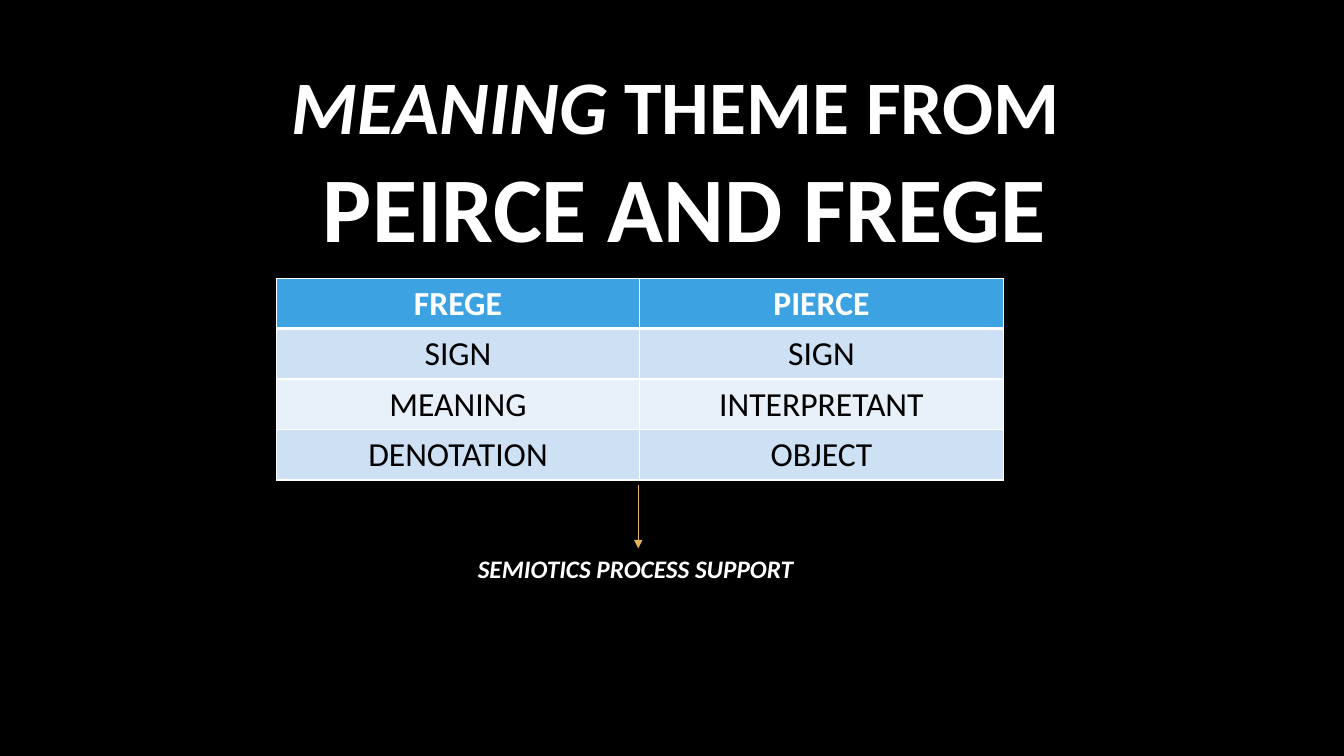
from lxml.etree import SubElement
from pptx import Presentation
from pptx.dml.color import RGBColor
from pptx.enum.shapes import MSO_CONNECTOR
from pptx.enum.text import MSO_ANCHOR, MSO_AUTO_SIZE, PP_ALIGN
from pptx.oxml.ns import qn
from pptx.util import Inches, Pt

COLORS = {
    "background": "000000", "light": "FFFFFF", "dark": "000000",
    "header": "3CA2E2", "odd": "CEE0F4", "even": "E8F0FA", "arrow": "E5B458",
}
WIDTH, HEIGHT = Inches(13.33), Inches(7.5)
TERMS = [
    ("FREGE", "PIERCE"),
    ("SIGN", "SIGN"),
    ("MEANING", "INTERPRETANT"),
    ("DENOTATION", "OBJECT"),
]


def color(name):
    """Return the palette colour with this name."""
    return RGBColor.from_string(COLORS[name])


def style(font, size, ink, bold=False, italic=None):
    """Set the typeface, size, colour and weight of a font."""
    font.name, font.size = "Calibri", Pt(size)
    font.color.rgb = color(ink)
    font.bold, font.italic = bold, italic


def add_title(slide, left, top, width, height):
    """Place the two-line heading, centred in its box."""
    heading = slide.shapes.add_textbox(left, top, width, height).text_frame
    heading.word_wrap = True
    heading.vertical_anchor = MSO_ANCHOR.MIDDLE
    line = heading.paragraphs[0]
    line.alignment = PP_ALIGN.CENTER
    for words, size, italic in [("MEANING ", 54, True), ("THEME FROM ", 54, False),
                                ("PEIRCE AND FREGE", 66, False)]:
        if size == 66:
            line.add_line_break()
        run = line.add_run()
        run.text = words
        style(run.font, size, "light", True, italic)


def add_borders(cell, widths):
    """Draw the cell's borders, given as points by side."""
    properties = cell._tc.get_or_add_tcPr()
    for side, points in widths.items():
        border = SubElement(properties, qn(f"a:ln{side}"), w=str(Pt(points)))
        fill = SubElement(border, qn("a:solidFill"))
        SubElement(fill, qn("a:srgbClr"), val=COLORS["light"])


def add_terms(slide, left, top, width, height):
    """Place the table that pairs the terms of both thinkers."""
    table = slide.shapes.add_table(len(TERMS), 2, left, top, width, height).table
    for row, pair in enumerate(TERMS):
        band = "header" if row == 0 else "odd" if row % 2 else "even"
        for column, term in enumerate(pair):
            cell = table.cell(row, column)
            add_borders(cell, {"L": 1, "R": 1, "T": 3 if row == 1 else 1,
                               "B": 3 if row == 0 else 1})
            cell.fill.solid()
            cell.fill.fore_color.rgb = color(band)
            cell.text = term
            paragraph = cell.text_frame.paragraphs[0]
            paragraph.alignment = PP_ALIGN.CENTER
            style(paragraph.font, 24, "dark" if row else "light", row == 0)


def add_support(slide, left, top, width, height, arrow_length):
    """Place the caption and the arrow that comes down to it."""
    caption = slide.shapes.add_textbox(left, top, width, height)
    caption.text_frame.word_wrap = False
    caption.text_frame.auto_size = MSO_AUTO_SIZE.SHAPE_TO_FIT_TEXT
    paragraph = caption.text_frame.paragraphs[0]
    paragraph.text = "SEMIOTICS PROCESS SUPPORT"
    style(paragraph.font, 18, "light", True, True)

    middle = left + width // 2
    arrow = slide.shapes.add_connector(
        MSO_CONNECTOR.STRAIGHT, middle, top - arrow_length, middle, top)
    arrow.end_connect(caption, 0)
    arrow.line.color.rgb = color("arrow")
    arrow.line.width = Pt(0.75)
    SubElement(arrow.line._get_or_add_ln(), qn("a:tailEnd"), type="triangle")
    SubElement(arrow._element.spPr, qn("a:effectLst"))


def main():
    """Build the slide and save it."""
    deck = Presentation()
    deck.slide_width, deck.slide_height = WIDTH, HEIGHT
    slide = deck.slides.add_slide(deck.slide_layouts[6])
    slide.background.fill.solid()
    slide.background.fill.fore_color.rgb = color("background")
    add_title(slide, Inches(1.25), Inches(0.79), Inches(11.08), Inches(1.59))
    add_terms(slide, Inches(2.74), Inches(2.76), Inches(7.21), Inches(2))
    add_support(slide, Inches(4.64), Inches(5.44), Inches(3.38), Inches(0.4),
                Inches(0.63))
    deck.save("out.pptx")


if __name__ == "__main__":
    main()
